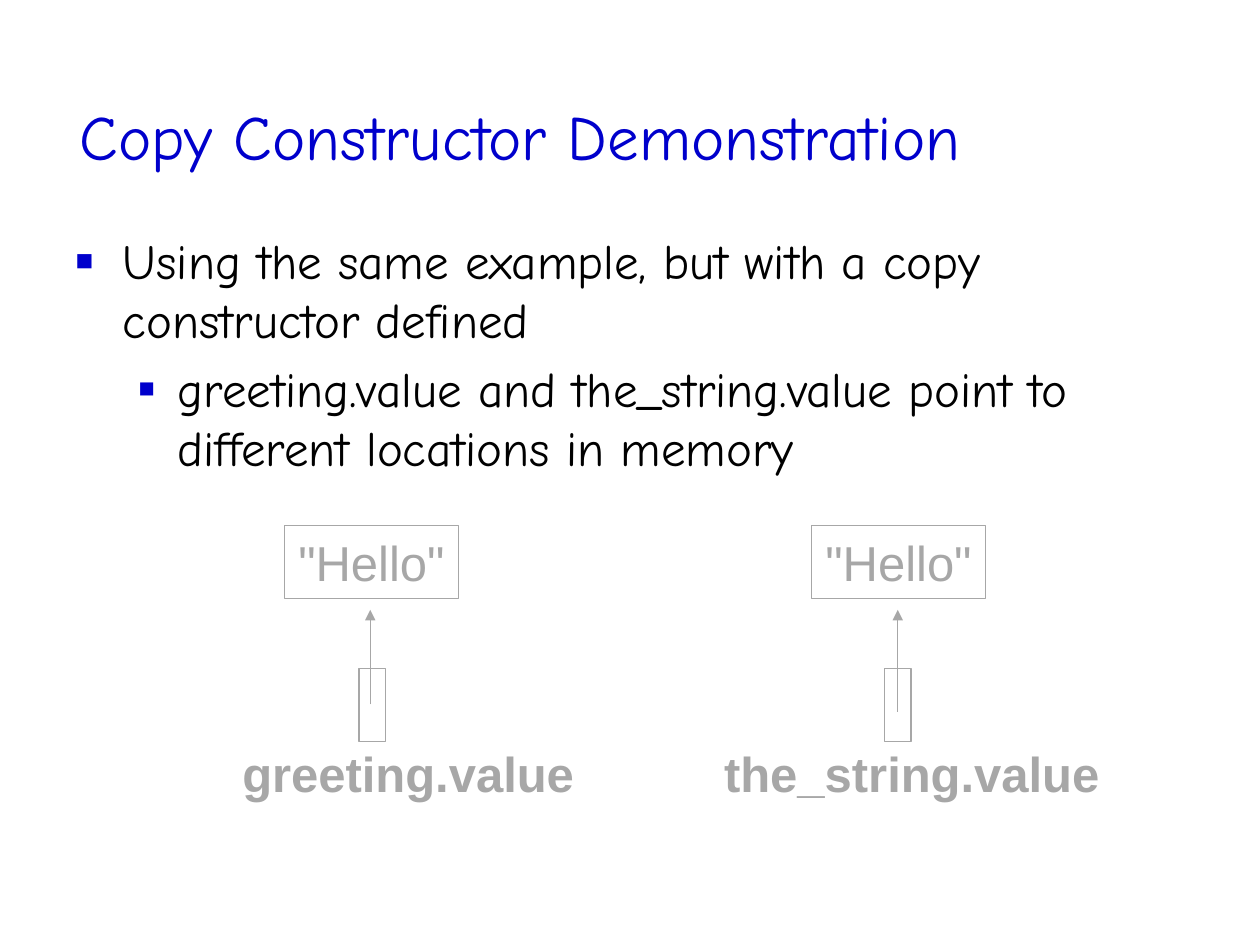
from dataclasses import dataclass

from lxml import etree
from pptx import Presentation
from pptx.dml.color import RGBColor
from pptx.enum.shapes import MSO_CONNECTOR, MSO_SHAPE
from pptx.enum.text import MSO_ANCHOR, PP_ALIGN
from pptx.oxml.ns import qn
from pptx.util import Pt

RECT = MSO_SHAPE.RECTANGLE
STRAIGHT = MSO_CONNECTOR.STRAIGHT
BOTTOM, MIDDLE, TOP = MSO_ANCHOR.BOTTOM, MSO_ANCHOR.MIDDLE, MSO_ANCHOR.TOP
CENTER = PP_ALIGN.CENTER
COLORS = {"blue": "0000CC", "black": "000000", "gray": "A7A7A7"}
HEADING_FONT, DIAGRAM_FONT = "Comic Neue", "Arial"
BOX_HEIGHT = 41.6
LINE_WIDTH = 0.75


@dataclass
class Bullet:
    text: str
    indent: float
    hanging: float
    size_percent: int
    level: int = 0


@dataclass
class Pointer:
    name: str
    label_left: float
    label_width: float
    value_left: float
    cell_left: float
    arrow_x: float
    arrow_start: float


BULLETS = [
    Bullet("Using the same example, but with a copy\nconstructor defined", 27, 27, 60),
    Bullet("greeting.value and the_string.value point to \n"
           "different locations in memory", 58.5, 22.5, 55, 1),
]
POINTERS = [
    Pointer("greeting.value", 131, 204.5, 162.5, 205.2, 211.6, 402.5),
    Pointer("the_string.value", 406.1, 229.7, 463.7, 505.4, 513, 406.8),
]


def color(name: str) -> RGBColor:
    return RGBColor.from_string(COLORS[name])


def format_text(p, size: float, font: str, color_name: str, bold: bool = False) -> None:
    for r in p.runs:
        r.font.size = Pt(size)
        r.font.name = font
        r.font.bold = bold
        r.font.color.rgb = color(color_name)


def add_text_box(s, left: float, top: float, width: float, height: float,
                 anchor, inset: float):
    tf = s.shapes.add_textbox(Pt(left), Pt(top), Pt(width), Pt(height)).text_frame
    tf.word_wrap = True
    tf.vertical_anchor = anchor
    tf.margin_left = tf.margin_right = tf.margin_top = tf.margin_bottom = Pt(inset)
    return tf


def add_bullet(p, bullet: Bullet) -> None:
    p.text = bullet.text
    p.level = bullet.level
    p.space_before = Pt(6)
    format_text(p, 28, HEADING_FONT, "black")
    pPr = p._p.get_or_add_pPr()
    pPr.set("marL", str(Pt(bullet.indent)))
    pPr.set("indent", str(-Pt(bullet.hanging)))
    bu_color = etree.SubElement(pPr, qn("a:buClr"))
    etree.SubElement(bu_color, qn("a:srgbClr"), val=COLORS["blue"])
    etree.SubElement(pPr, qn("a:buSzPct"), val=str(bullet.size_percent * 1000))
    etree.SubElement(pPr, qn("a:buFont"), typeface=DIAGRAM_FONT)
    etree.SubElement(pPr, qn("a:buChar"), char="■")


def set_centered_text(tf, text: str, bold: bool = False) -> None:
    tf.word_wrap = False
    tf.vertical_anchor = MIDDLE
    p = tf.paragraphs[0]
    p.text = text
    p.alignment = CENTER
    format_text(p, 28, DIAGRAM_FONT, "gray", bold)


def add_box(s, left: float, top: float, width: float):
    box = s.shapes.add_shape(RECT, Pt(left), Pt(top), Pt(width), Pt(BOX_HEIGHT))
    box.shadow.inherit = False
    box.fill.background()
    box.line.color.rgb = color("gray")
    box.line.width = Pt(LINE_WIDTH)
    return box


def add_up_arrow(s, x: float, start: float, end: float) -> None:
    arrow = s.shapes.add_connector(STRAIGHT, Pt(x), Pt(start), Pt(x), Pt(end))
    arrow.line.color.rgb = color("gray")
    arrow.line.width = Pt(LINE_WIDTH)
    etree.SubElement(arrow.line._get_or_add_ln(), qn("a:tailEnd"), type="triangle")
    etree.SubElement(arrow._element.spPr, qn("a:effectLst"))


def add_pointer(s, pointer: Pointer) -> None:
    """Draw a named pointer cell with an arrow up to the string it holds."""
    label = add_text_box(s, pointer.label_left, 421.2, pointer.label_width, 41, TOP, 3.6)
    set_centered_text(label, pointer.name, bold=True)
    add_box(s, pointer.cell_left, 382.2, 15.2)
    value = add_box(s, pointer.value_left, 300.4, 99.4)
    set_centered_text(value.text_frame, '"Hello"')
    add_up_arrow(s, pointer.arrow_x, pointer.arrow_start, 348.5)


def main() -> None:
    prs = Presentation()
    prs.slide_width, prs.slide_height = Pt(720), Pt(540)
    s = prs.slides.add_slide(prs.slide_layouts[6])

    title = add_text_box(s, 41.8, 0, 653.8, 102.2, BOTTOM, 3.6).paragraphs[0]
    title.text = "Copy Constructor Demonstration"
    format_text(title, 36, HEADING_FONT, "blue")

    body = add_text_box(s, 43.2, 131.8, 653, 408.2, TOP, 0)
    for i, bullet in enumerate(BULLETS):
        add_bullet(body.add_paragraph() if i else body.paragraphs[0], bullet)

    for pointer in POINTERS:
        add_pointer(s, pointer)
    prs.save("out.pptx")


if __name__ == "__main__":
    main()
